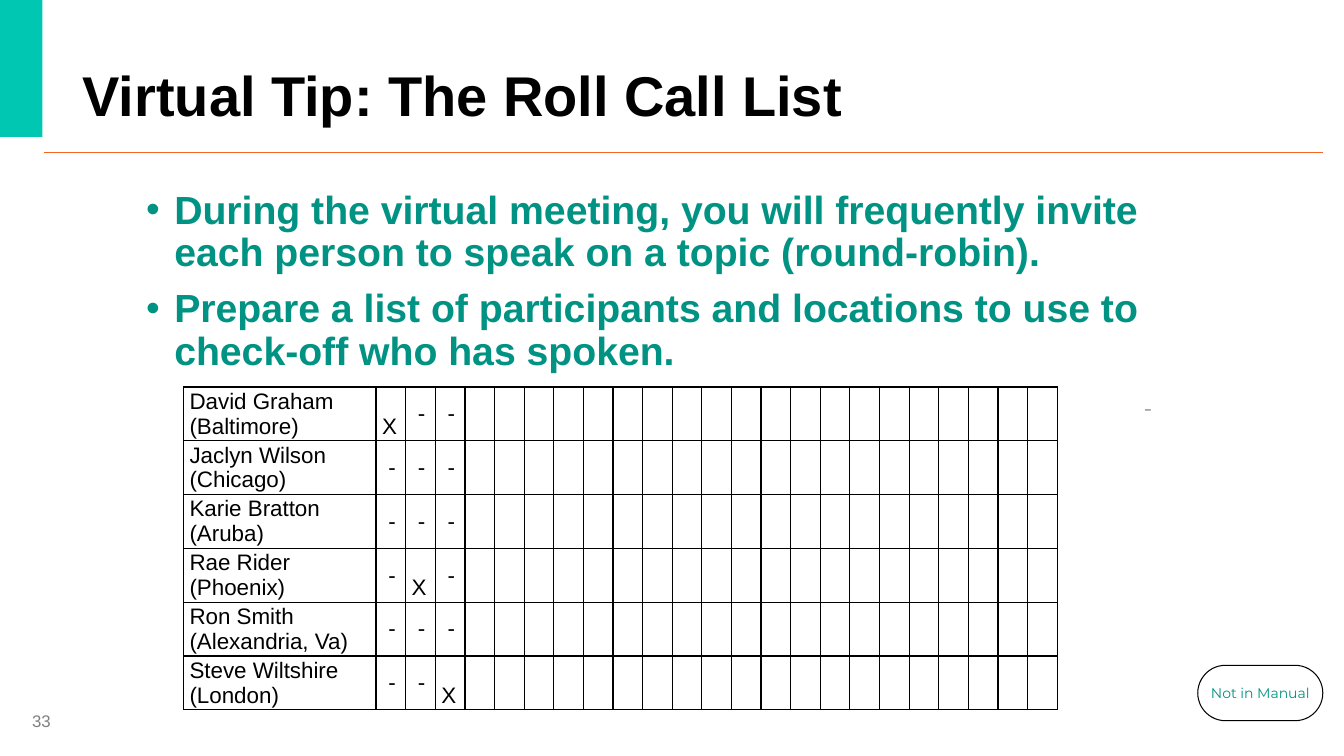
from dataclasses import dataclass

from lxml.etree import SubElement
from pptx import Presentation
from pptx.dml.color import RGBColor as RGB
from pptx.enum.shapes import MSO_CONNECTOR as CONN, MSO_SHAPE as SHAPE
from pptx.enum.text import MSO_ANCHOR as ANCHOR, MSO_AUTO_SIZE as AUTO, PP_ALIGN as ALIGN
from pptx.oxml.ns import qn
from pptx.util import Emu, Pt

PX = 9144


@dataclass(frozen=True)
class Theme:
    """Colours, fonts and type sizes of the slide."""
    turquoise: str = "00C7B1"
    teal: str = "009383"
    orange: str = "F26522"
    black: str = "000000"
    white: str = "FFFFFF"
    grey: str = "808080"
    pale: str = "A6A6A6"
    font: str = "Arial"
    dash_font: str = "Calibri"
    tag_font: str = "Montserrat"
    title: int = 40
    body: int = 28
    dash: int = 18
    table: int = 16
    number: int = 12
    tag: int = 10


T = Theme()

TIPS = [
    "During the virtual meeting, you will frequently invite each person to speak on a topic (round-robin).",
    "Prepare a list of participants and locations to use to check-off who has spoken.",
]
ROLL = [
    ("David Graham", "(Baltimore)", "X--"),
    ("Jaclyn Wilson", "(Chicago)", "---"),
    ("Karie Bratton", "(Aruba)", "---"),
    ("Rae Rider", "(Phoenix)", "-X-"),
    ("Ron Smith", "(Alexandria, Va)", "---"),
    ("Steve Wiltshire", "(London)", "--X"),
]
CHECK_COLS = 23


def px(n):
    """Turn px into EMU."""
    return Emu(n * PX)


def add_run(p, text, size, color, font=T.font, bold=False):
    """Add one formatted run to a paragraph."""
    r = p.add_run()
    r.text = text
    r.font.name, r.font.size, r.font.bold = font, Pt(size), bold
    r.font.color.rgb = RGB.from_string(color)


def add_box(s, x, y, w, h, wrap=True, anchor=ANCHOR.TOP):
    """Add a text box and return its text frame."""
    tf = s.shapes.add_textbox(px(x), px(y), px(w), px(h)).text_frame
    tf.word_wrap, tf.vertical_anchor = wrap, anchor
    return tf


def add_panel(s, kind, x, y, w, h, fill, line=None):
    """Add a flat preset shape with an optional outline."""
    sp = s.shapes.add_shape(kind, px(x), px(y), px(w), px(h))
    sp.shadow.inherit = False
    sp.fill.solid()
    sp.fill.fore_color.rgb = RGB.from_string(fill)
    if line:
        sp.line.color.rgb = RGB.from_string(line)
        sp.line.width = Pt(0.75)
    else:
        sp.line.fill.background()
    return sp


def add_rule(s, x1, x2, y):
    """Add the thin rule under the title."""
    c = s.shapes.add_connector(CONN.STRAIGHT, px(x1), px(y), px(x2), px(y))
    c.line.color.rgb = RGB.from_string(T.orange)
    c.line.width = Pt(0.5)
    SubElement(c._element.spPr, qn("a:effectLst"))


def set_title(s, text):
    """Place and fill the title placeholder."""
    sp = s.shapes.title
    sp.left, sp.top, sp.width, sp.height = px(72), px(57), px(812), px(76)
    tf = sp.text_frame
    tf.auto_size, tf.vertical_anchor = AUTO.NONE, ANCHOR.BOTTOM
    p = tf.paragraphs[0]
    p.alignment, p.line_spacing = ALIGN.LEFT, 0.9
    add_run(p, text, T.title, T.black, bold=True)


def add_bullets(s, tips):
    """Add the bulleted tips."""
    tf = add_box(s, 135, 184, 1062, 200)
    for i, tip in enumerate(tips):
        p = tf.add_paragraph() if i else tf.paragraphs[0]
        pPr = p._p.get_or_add_pPr()
        pPr.set("marL", str(px(28)))
        pPr.set("indent", str(px(-28)))
        color = SubElement(pPr, qn("a:buClr"))
        SubElement(color, qn("a:srgbClr"), val=T.teal)
        SubElement(pPr, qn("a:buFont"), typeface=T.font)
        SubElement(pPr, qn("a:buChar"), char="•")
        p.line_spacing = 0.9
        if i:
            p.space_before = Pt(10)
        add_run(p, tip, T.body, T.teal, bold=True)


def format_cell(cell):
    """Give a cell its margins, borders and empty fill."""
    cell.margin_left = cell.margin_right = px(6)
    cell.margin_top = cell.margin_bottom = 0
    cell.vertical_anchor = ANCHOR.MIDDLE
    tcPr = cell._tc.get_or_add_tcPr()
    for side in ("lnL", "lnR", "lnT", "lnB"):
        ln = SubElement(tcPr, qn(f"a:{side}"), w=str(Pt(1)))
        fill = SubElement(ln, qn("a:solidFill"))
        SubElement(fill, qn("a:srgbClr"), val=T.black)
    cell.fill.background()


def fill_cell(cell, lines):
    """Write one paragraph for each line."""
    tf = cell.text_frame
    for i, line in enumerate(lines):
        p = tf.add_paragraph() if i else tf.paragraphs[0]
        add_run(p, line, T.table, T.black)


def add_roll_call(s, roll):
    """Add the table of participants and check-off columns."""
    w, h, name_w = 867, 320, 191
    table = s.shapes.add_table(len(roll), CHECK_COLS + 1, px(182), px(384), px(w), px(h)).table
    table.first_row = table.horz_banding = False
    for i, col in enumerate(table.columns):
        col.width = Emu(px(w - name_w) // CHECK_COLS) if i else px(name_w)
    for row, (name, place, marks) in zip(table.rows, roll):
        row.height = Emu(px(h) // len(roll))
        for cell in row.cells:
            format_cell(cell)
        fill_cell(row.cells[0], [name, place])
        for i, mark in enumerate(marks, 1):
            fill_cell(row.cells[i], [f" {mark}"])


def add_tag(s, text):
    """Add the rounded tag in the corner."""
    sp = add_panel(s, SHAPE.ROUNDED_RECTANGLE, 1188, 660, 124, 55, T.white, T.black)
    sp.adjustments[0] = 0.5
    tf = sp.text_frame
    tf.word_wrap, tf.vertical_anchor = False, ANCHOR.MIDDLE
    p = tf.paragraphs[0]
    p.alignment = ALIGN.CENTER
    add_run(p, text, T.tag, T.teal, T.tag_font)


def main():
    """Build and save the slide."""
    prs = Presentation()
    prs.slide_width, prs.slide_height = px(1333), px(750)
    s = prs.slides.add_slide(prs.slide_layouts[5])
    add_panel(s, SHAPE.RECTANGLE, 0, 0, 42, 136, T.turquoise)
    add_rule(s, 44, 1312, 151)
    set_title(s, "Virtual Tip: The Roll Call List")
    add_bullets(s, TIPS)
    number = add_box(s, 22, 695, 300, 40, anchor=ANCHOR.MIDDLE)
    add_run(number.paragraphs[0], "33", T.number, T.grey)
    dash = add_box(s, 1125, 384, 28, 40, wrap=False)
    add_run(dash.paragraphs[0], "-", T.dash, T.pale, T.dash_font)
    add_roll_call(s, ROLL)
    add_tag(s, "Not in Manual")
    prs.save("out.pptx")


if __name__ == "__main__":
    main()
